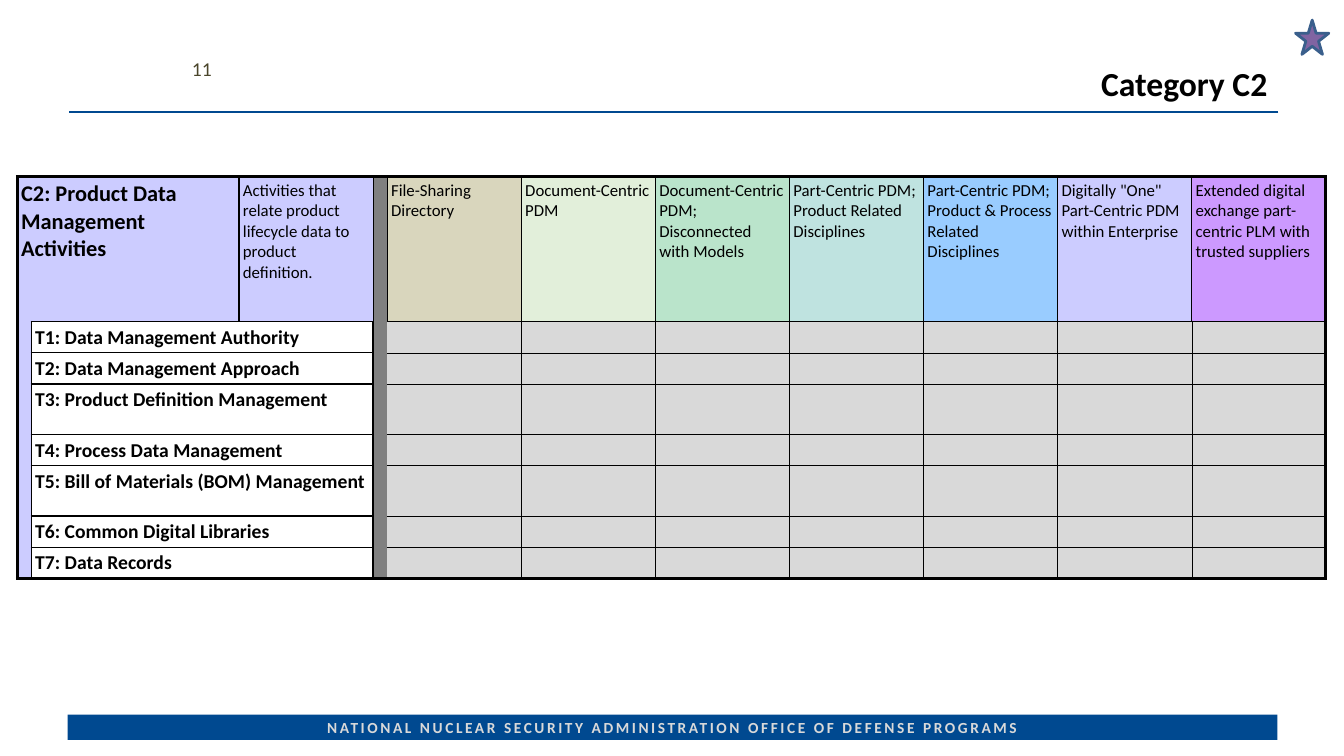
from lxml import etree
from pptx import Presentation
from pptx.dml.color import RGBColor
from pptx.enum.shapes import MSO_CONNECTOR, MSO_SHAPE
from pptx.enum.text import MSO_ANCHOR, PP_ALIGN
from pptx.oxml.ns import qn
from pptx.util import Inches, Pt

TITLE = "Category C2"
NUMBER = "11"
FOOTER = "NATIONAL NUCLEAR SECURITY ADMINISTRATION OFFICE OF DEFENSE PROGRAMS"
GROUP = "C2: Product Data Management Activities"
ABOUT = "Activities that relate product lifecycle data to product definition."
LEVELS = [
    ("File-Sharing Directory", "D9D6BD"),
    ("Document-Centric PDM", "E2EFDA"),
    ("Document-Centric PDM; Disconnected with Models", "BAE4CB"),
    ("Part-Centric PDM; Product Related Disciplines", "BFE3E0"),
    ("Part-Centric PDM; Product & Process Related Disciplines", "99CCFF"),
    ('Digitally "One" Part-Centric PDM within Enterprise', "CCCCFF"),
    ("Extended digital exchange part-centric PLM with trusted suppliers", "CC99FF"),
]
TASKS = [
    ("T1: Data Management Authority", 0.31),
    ("T2: Data Management Approach", 0.31),
    ("T3: Product Definition Management", 0.5),
    ("T4: Process Data Management", 0.31),
    ("T5: Bill of Materials (BOM) Management", 0.5),
    ("T6: Common Digital Libraries", 0.31),
    ("T7: Data Records", 0.31),
]
FONT = "Calibri"
BLACK = RGBColor(0x00, 0x00, 0x00)
WHITE = RGBColor(0xFF, 0xFF, 0xFF)
BLUE = RGBColor(0x00, 0x49, 0x90)
LILAC = RGBColor(0xCC, 0xCC, 0xFF)
GRAY = RGBColor(0x80, 0x80, 0x80)
PALE = RGBColor(0xD9, 0xD9, 0xD9)
OLIVE = RGBColor(0x4A, 0x45, 0x2A)
PURPLE = RGBColor(0x80, 0x64, 0xA2)
NAVY = RGBColor(0x3A, 0x5F, 0x8C)
LEFT, CENTER, RIGHT = PP_ALIGN.LEFT, PP_ALIGN.CENTER, PP_ALIGN.RIGHT
TOP, MIDDLE, BOTTOM = MSO_ANCHOR.TOP, MSO_ANCHOR.MIDDLE, MSO_ANCHOR.BOTTOM
RECT, STAR = MSO_SHAPE.RECTANGLE, MSO_SHAPE.STAR_5_POINT
STRAIGHT = MSO_CONNECTOR.STRAIGHT

WIDTHS = [0.14, 2.06, 1.33, 0.14] + [1.33] * len(LEVELS)
HEIGHTS = [1.44] + [high for _, high in TASKS]
COLS, ROWS = len(WIDTHS), len(HEIGHTS)
BAR, FIRST = 3, 4


def write(frame, text, size, color, bold=False, align=LEFT, anchor=TOP):
    frame.text = text
    frame.word_wrap = True
    frame.vertical_anchor = anchor
    para = frame.paragraphs[0]
    para.alignment = align
    for run in para.runs:
        font = run.font
        font.name, font.size, font.bold = FONT, Pt(size), bold
        font.color.rgb = color
    return para


def place(shape, left, top, width, height):
    shape.left, shape.top = Inches(left), Inches(top)
    shape.width, shape.height = Inches(width), Inches(height)


def upright(row, edge):
    if edge in (0, COLS):
        return 2.25
    if edge < BAR:
        return 1
    if edge == BAR:
        return 1 if row else 0.5
    if edge == FIRST:
        return 0 if row else 0.5
    return 0.25 if row else 1


def level(edge, col):
    if edge in (0, ROWS):
        return 2.25
    if col in (0, BAR):
        return 0
    if col < BAR:
        return 1
    return 1.5 if edge == 1 else 0.25


def border(cell, row, col):
    props = cell._tc.get_or_add_tcPr()
    sides = {
        "a:lnL": upright(row, col),
        "a:lnR": upright(row, col + 1),
        "a:lnT": level(row, col),
        "a:lnB": level(row + 1, col),
    }
    for tag, width in sides.items():
        line = etree.SubElement(props, qn(tag), w=str(Pt(width)))
        if width:
            fill = etree.SubElement(line, qn("a:solidFill"))
            etree.SubElement(fill, qn("a:srgbClr"), val=str(BLACK))
        else:
            etree.SubElement(line, qn("a:noFill"))


def content(row, col):
    if col == BAR:
        return "", 12, False, GRAY
    if row == 0:
        if col == 0:
            return GROUP, 16, True, LILAC
        if col == 1:
            return "", 12, False, LILAC
        if col == 2:
            return ABOUT, 12, False, LILAC
        text, color = LEVELS[col - FIRST]
        return text, 12, False, RGBColor.from_string(color)
    if col == 0:
        return "", 12, False, LILAC
    if col == 1:
        return TASKS[row - 1][0], 14, True, WHITE
    return "", 12, False, WHITE if col == 2 else PALE


def matrix(slide):
    frame = slide.shapes.add_table(
        ROWS, COLS, Inches(0.17), Inches(1.75),
        Inches(sum(WIDTHS)), Inches(sum(HEIGHTS)))
    table = frame.table
    table.first_row = table.horz_banding = False
    for col, width in enumerate(WIDTHS):
        table.columns[col].width = Inches(width)
    for row, height in enumerate(HEIGHTS):
        table.rows[row].height = Inches(height)
        for col in range(COLS):
            cell = table.cell(row, col)
            text, size, bold, color = content(row, col)
            cell.margin_left = cell.margin_right = Inches(0.04)
            cell.margin_top, cell.margin_bottom = Inches(0.04), Inches(0.03)
            border(cell, row, col)
            cell.fill.solid()
            cell.fill.fore_color.rgb = color
            if text:
                write(cell.text_frame, text, size, BLACK, bold)
            else:
                para = cell.text_frame.paragraphs[0]
                etree.SubElement(para._p, qn("a:endParaRPr"), sz=str(size * 100))
        start = 1 if row else 0
        table.cell(row, start).merge(table.cell(row, start + 1))


def main():
    deck = Presentation()
    deck.slide_width, deck.slide_height = Inches(13.33), Inches(7.5)
    slide = deck.slides.add_slide(deck.slide_layouts[5])
    shapes = slide.shapes

    band = shapes.add_shape(
        RECT, Inches(0.67), Inches(7.09), Inches(12), Inches(0.25))
    band.shadow.inherit = False
    band.fill.solid()
    band.fill.fore_color.rgb = BLUE
    band.line.fill.background()
    frame = band.text_frame
    frame.margin_left = frame.margin_right = Inches(0.03)
    frame.margin_top = frame.margin_bottom = Inches(0.03)
    para = write(frame, FOOTER, 11, PALE, True, CENTER, MIDDLE)
    para.runs[0].font._element.set("spc", "180")

    rule = shapes.add_connector(
        STRAIGHT, Inches(12.68), Inches(1.11), Inches(0.68), Inches(1.11))
    rule.line.color.rgb = BLUE
    rule.line.width = Pt(1.5)
    etree.SubElement(rule._element.spPr, qn("a:effectLst"))

    title = shapes.title
    place(title, 3.67, 0.18, 9, 0.9)
    para = write(title.text_frame, TITLE, 24, BLACK, True, RIGHT, BOTTOM)
    para.line_spacing = 0.85

    page = shapes.add_textbox(
        Inches(1.74), Inches(0.48), Inches(0.46), Inches(0.4))
    write(page.text_frame, NUMBER, 14, OLIVE, False, RIGHT, MIDDLE)

    matrix(slide)

    star = shapes.add_shape(
        STAR, Inches(12.85), Inches(0.2), Inches(0.33), Inches(0.34))
    star.shadow.inherit = False
    star.fill.solid()
    star.fill.fore_color.rgb = PURPLE
    star.line.color.rgb = NAVY
    star.line.width = Pt(2)

    deck.save("out.pptx")


if __name__ == "__main__":
    main()
